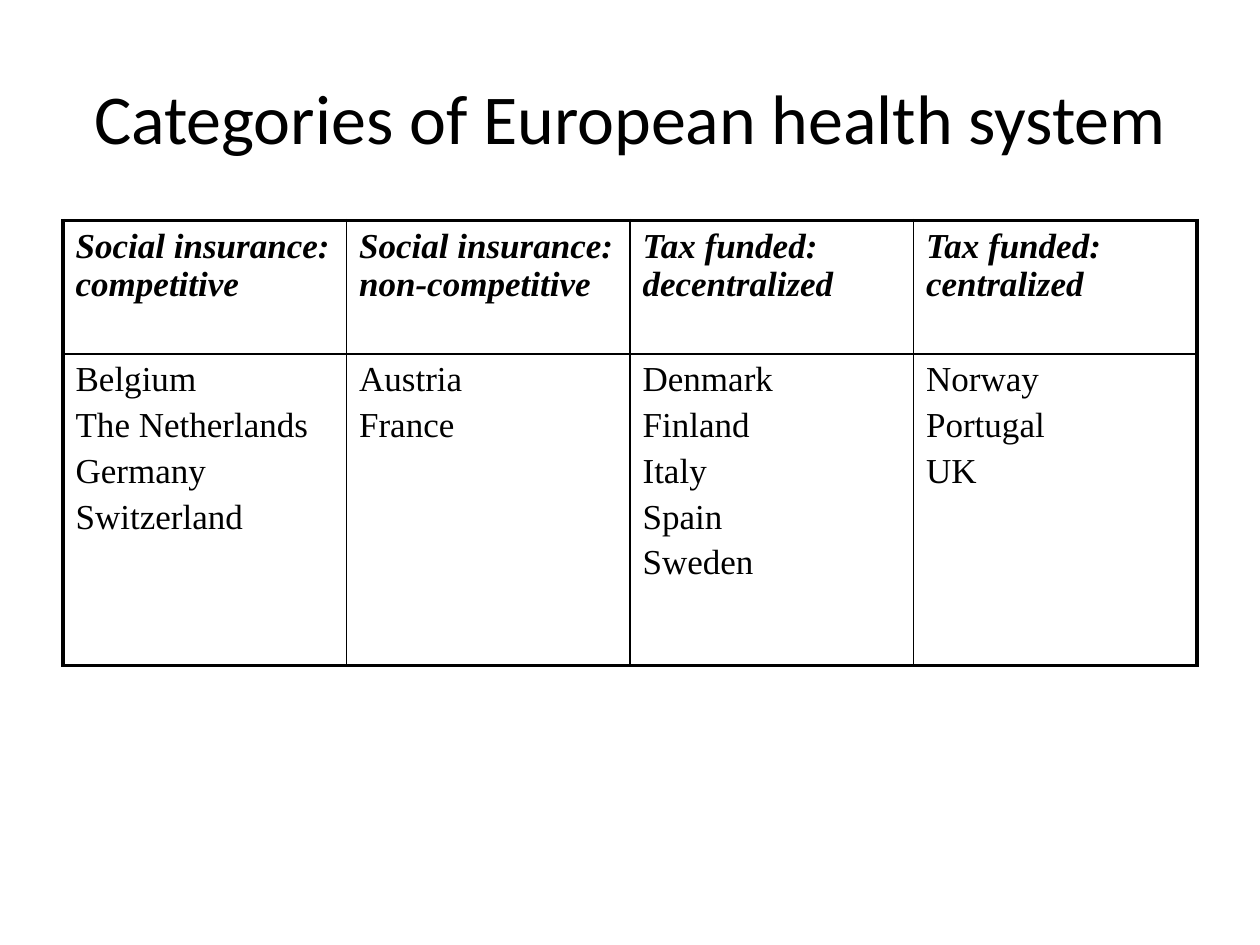
from lxml import etree
from pptx import Presentation
from pptx.dml.color import RGBColor
from pptx.enum.text import MSO_ANCHOR, PP_ALIGN
from pptx.oxml.ns import qn
from pptx.util import Emu, Pt

PX = 9144  # EMU per px, 100 px to the inch
MIDDLE, TOP = MSO_ANCHOR.MIDDLE, MSO_ANCHOR.TOP
CENTER, LEFT = PP_ALIGN.CENTER, PP_ALIGN.LEFT
BLACK = "000000"
THIN, THICK = 1, 2.25

TITLE_FONT = {"name": "Calibri", "size": Pt(40), "bold": False}
HEAD_FONT = {"name": "Times New Roman", "size": Pt(20), "bold": True, "italic": True}
BODY_FONT = {**HEAD_FONT, "bold": False, "italic": False}

SYSTEMS = {
    "Social insurance: competitive": ["Belgium", "The Netherlands", "Germany", "Switzerland"],
    "Social insurance: non-competitive": ["Austria", "France"],
    "Tax funded: decentralized": ["Denmark", "Finland", "Italy", "Spain", "Sweden"],
    "Tax funded: centralized": ["Norway", "Portugal", "UK"],
}


def px(length):
    return Emu(length * PX)


def color(hex_code):
    return RGBColor.from_string(hex_code)


def write_lines(frame, lines, font, para_format):
    """Put each line in its own paragraph."""
    for index, line in enumerate(lines):
        para = frame.add_paragraph() if index else frame.paragraphs[0]
        for name, value in para_format.items():
            setattr(para, name, value)
        span = para.add_run()
        span.text = line
        for name, value in font.items():
            setattr(span.font, name, value)
        span.font.color.rgb = color(BLACK)


def set_borders(cell, widths):
    """Draw solid cell borders; widths maps L, R, T, B in that order to points."""
    properties = cell._tc.get_or_add_tcPr()
    for side, width in widths.items():
        line = etree.SubElement(properties, qn(f"a:ln{side}"), w=str(Pt(width)))
        fill = etree.SubElement(line, qn("a:solidFill"))
        etree.SubElement(fill, qn("a:srgbClr"), val=BLACK)


def add_title(page, left, top, width, height, text):
    box = page.shapes.add_textbox(px(left), px(top), px(width), px(height))
    frame = box.text_frame
    frame.word_wrap = True
    frame.vertical_anchor = MIDDLE
    write_lines(frame, [text], TITLE_FONT, {"alignment": CENTER})


def add_systems_table(page, left, top, width, row_heights, systems):
    """Place one column per system: its name above its countries."""
    last_row, last_column = len(row_heights) - 1, len(systems) - 1
    table = page.shapes.add_table(
        len(row_heights), len(systems),
        px(left), px(top), px(width), px(sum(row_heights)),
    ).table
    table.first_row = table.horz_banding = False
    for row, height in zip(table.rows, row_heights):
        row.height = px(height)

    for column, (system, countries) in enumerate(systems.items()):
        table.columns[column].width = px(width // len(systems))
        contents = [([system], HEAD_FONT), (countries, BODY_FONT)]
        for row, (lines, font) in enumerate(contents):
            cell = table.cell(row, column)
            edges = {"L": column == 0, "R": column == last_column,
                     "T": row == 0, "B": row == last_row}
            set_borders(cell, {side: THICK if outer else THIN
                               for side, outer in edges.items()})
            cell.fill.background()
            cell.vertical_anchor = TOP
            write_lines(cell.text_frame, lines, font,
                        {"alignment": LEFT, "space_before": Pt(4)})


def main():
    deck = Presentation()
    deck.slide_width, deck.slide_height = px(1000), px(750)
    page = deck.slides.add_slide(deck.slide_layouts[6])
    add_title(page, 50, 30, 900, 125, "Categories of European health system")
    add_systems_table(page, 50, 175, 900, [106, 247], SYSTEMS)
    deck.save("out.pptx")


if __name__ == "__main__":
    main()
